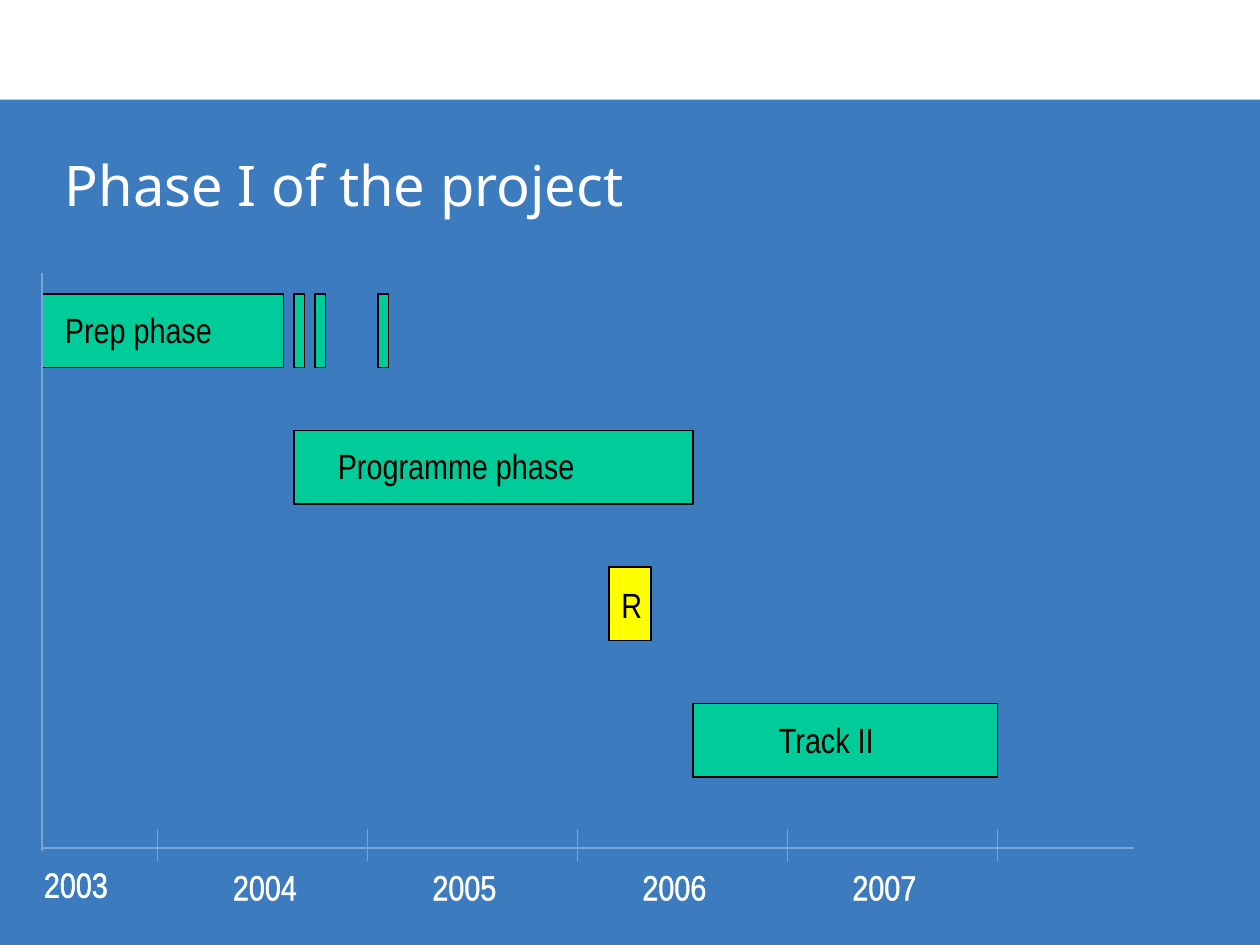
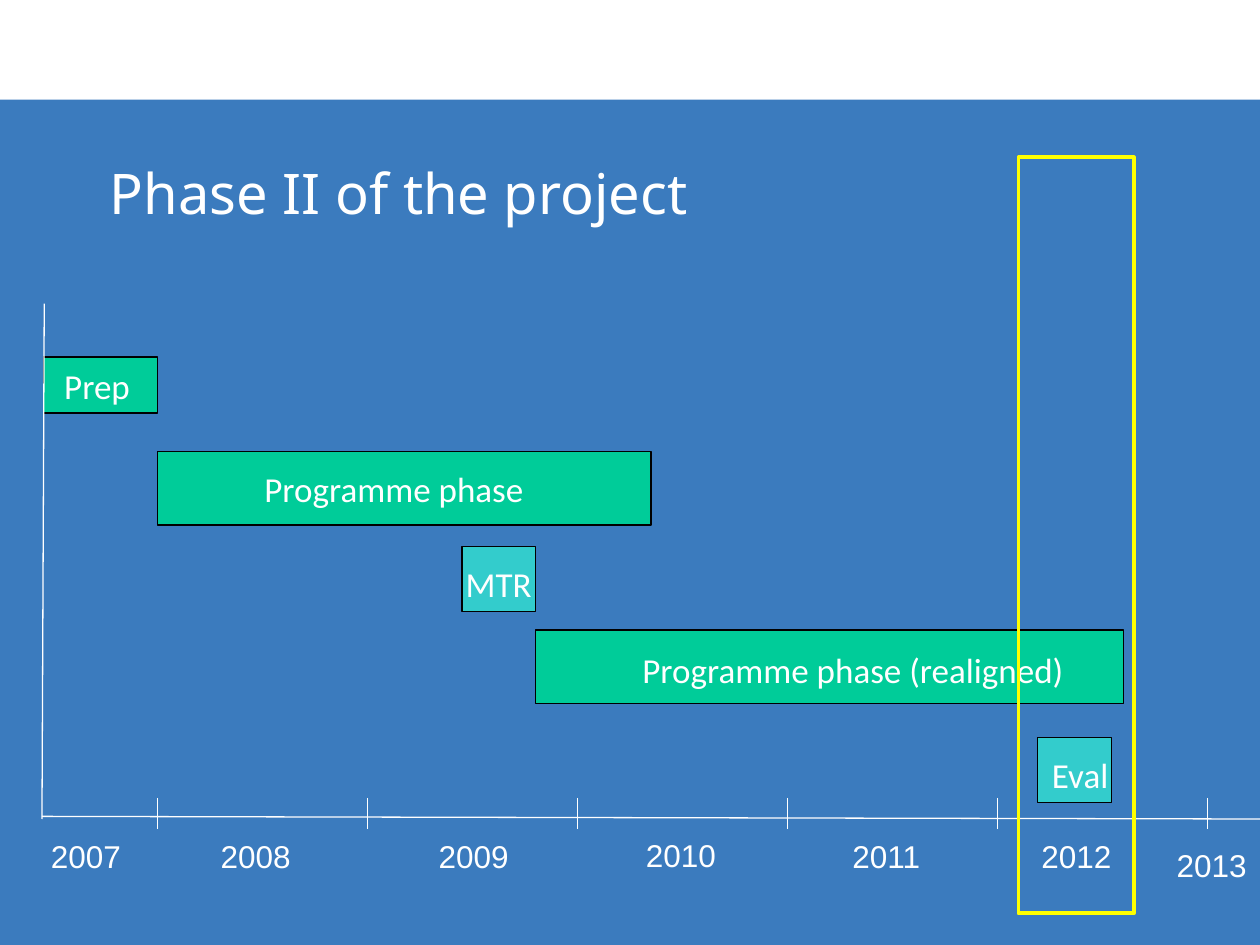
"""Build two timeline slides showing the phases of a project."""
import pptx
import pptx.util
import pptx.dml.color
import pptx.enum.shapes
import pptx.enum.text
import pptx.oxml
import pptx.oxml.ns
import lxml.etree

Pt = pptx.util.Pt
RGB = pptx.dml.color.RGBColor.from_string
ALIGN = pptx.enum.text.PP_ALIGN
ANCHOR = pptx.enum.text.MSO_ANCHOR
qn = pptx.oxml.ns.qn

COLORS = {
    "back": "3B7BBE", "white": "FFFFFF", "black": "000000", "pale": "77A5D5",
    "green": "00CC99", "teal": "33CCCC", "yellow": "FFFF00",
}


def draw(slide, area, fill=None, edge=None, width=0.75):
    """Draw a rectangle with an optional fill and edge."""
    rect = slide.shapes.add_shape(
        pptx.enum.shapes.MSO_SHAPE.RECTANGLE, *map(Pt, area))
    rect.shadow.inherit = False
    if fill:
        rect.fill.solid()
        rect.fill.fore_color.rgb = RGB(COLORS[fill])
    else:
        rect.fill.background()
    if edge:
        rect.line.color.rgb = RGB(COLORS[edge])
        rect.line.width = Pt(width)
    else:
        rect.line.fill.background()


def write(slide, text, area, font, size, color, align=ALIGN.LEFT, anchor=ANCHOR.TOP):
    """Add a line of text and return its paragraph."""
    box = slide.shapes.add_textbox(*map(Pt, area))
    frame = box.text_frame
    frame.word_wrap = True
    frame.vertical_anchor = anchor
    para = frame.paragraphs[0]
    para.text = text
    para.alignment = align
    para.font.name = font
    para.font.size = Pt(size)
    para.font.color.rgb = RGB(COLORS[color])
    return para


PHASES = [
    {
        "title": "Phase I of the project",
        "place": (30, 72, 636, 66), "align": ALIGN.LEFT,
        "bars": [
            (24, 168, 138, 42, "green"), (168, 168, 6, 42, "green"),
            (180, 168, 6, 42, "green"), (216, 168, 6, 42, "green"),
            (168, 246, 228, 42, "green"), (348, 324, 24, 42, "yellow"),
            (396, 402, 174, 42, "green"),
        ],
        "axes": [(24, 156, 24, 486), (648, 484.5, 24, 484.5)],
        "ticks": 5, "top": 474, "line": "pale",
        "font": "Arial Narrow", "color": "black",
        "labels": [
            ("Prep phase", 30, 173, 198, ALIGN.LEFT),
            ("Programme phase", 186, 250.5, 180, ALIGN.LEFT),
            ("R", 348, 330, 18, ALIGN.LEFT),
            ("Track II", 438, 407, 90, ALIGN.LEFT),
        ],
        "first": 2003, "face": "Arial Narrow", "size": 20, "outline": True,
        "years": [(18, 489.5), (126, 491), (240, 491), (360, 491), (480, 491)],
    },
    {
        "title": "Phase II of the project",
        "place": (24, 77, 408, 66), "align": ALIGN.CENTER,
        "bars": [
            (25, 204, 65, 32, "green"), (90, 258, 282, 42, "green"),
            (264, 312.3, 42, 37, "teal"), (306, 360, 336, 42, "green"),
            (593, 421.5, 42, 37, "teal"),
        ],
        "axes": [(25.3, 173.5, 24, 468), (720, 468, 24, 466.5)],
        "ticks": 6, "top": 456, "line": "white",
        "font": "Calibri", "color": "white",
        "labels": [
            ("Prep", 0, 205, 111, ALIGN.CENTER),
            ("Programme phase", 144, 263.5, 180, ALIGN.LEFT),
            ("MTR", 258, 318, 54, ALIGN.CENTER),
            ("Programme phase (realigned)", 360, 367, 276, ALIGN.LEFT),
            ("Eval", 594, 427, 54, ALIGN.LEFT),
        ],
        "first": 2007, "face": "Arial", "size": 18, "outline": False,
        "years": [(22, 474.5), (119, 474.5), (243.5, 474.5), (362, 474),
                  (480, 474.5), (588, 474.5), (665.2, 480)],
        "frame": (582, 90, 66, 432),
    },
]

deck = pptx.Presentation()
deck.slide_width, deck.slide_height = Pt(720), Pt(540)

for phase in PHASES:
    slide = deck.slides.add_slide(deck.slide_layouts[6])
    slide.background.fill.solid()
    slide.background.fill.fore_color.rgb = RGB(COLORS["back"])
    draw(slide, (0, 0, 720, 57), "white")
    write(slide, phase["title"], phase["place"], "Noto Sans", 32, "white",
          phase["align"], ANCHOR.MIDDLE)

    for *area, fill in phase["bars"]:
        draw(slide, area, fill, "black")

    top = phase["top"]
    ticks = [(90 + 120 * i, top, 90 + 120 * i, top + 18) for i in range(phase["ticks"])]
    for ends in phase["axes"] + ticks:
        line = slide.shapes.add_connector(
            pptx.enum.shapes.MSO_CONNECTOR.STRAIGHT, *map(Pt, ends))
        line.line.color.rgb = RGB(COLORS[phase["line"]])
        line.line.width = Pt(0.75)
        lxml.etree.SubElement(line._element.spPr, qn("a:effectLst"))

    for text, left, y, width, align in phase["labels"]:
        write(slide, text, (left, y, width, 31), phase["font"], 20, phase["color"], align)

    for year, (left, y) in enumerate(phase["years"], phase["first"]):
        width = min(60, 720 - left)
        para = write(slide, str(year), (left, y, width, 30),
                     phase["face"], phase["size"], "white")
        if phase["outline"]:
            props = para._p.pPr.find(qn("a:defRPr"))
            props.insert(0, pptx.oxml.parse_xml(
                f'<a:ln {pptx.oxml.ns.nsdecls("a")} w="9525"><a:solidFill>'
                f'<a:srgbClr val="{COLORS["white"]}"/></a:solidFill></a:ln>'))

    if "frame" in phase:
        draw(slide, phase["frame"], edge="yellow", width=2.25)

deck.save("out.pptx")
